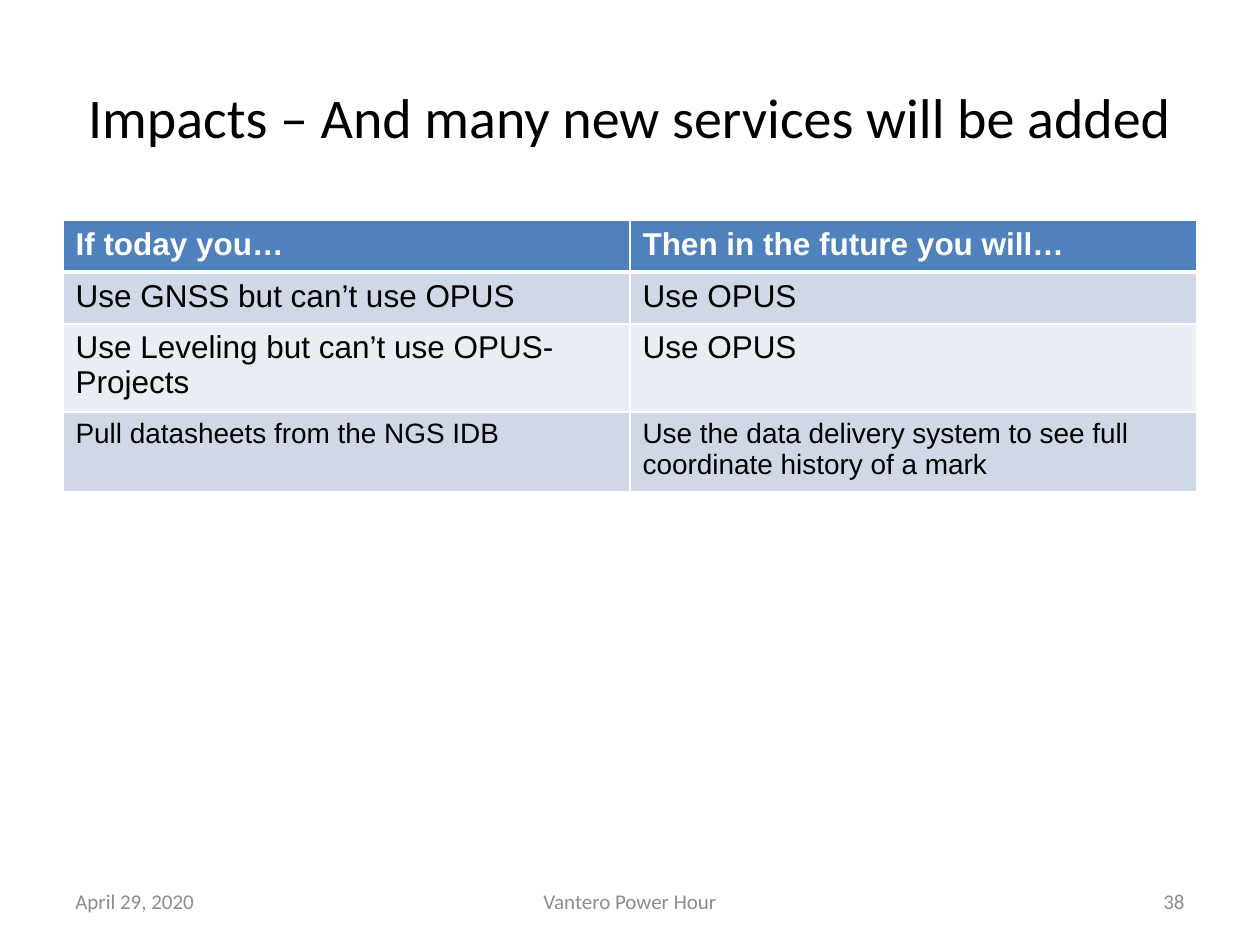
from lxml.etree import SubElement
from pptx import Presentation
from pptx.dml.color import RGBColor
from pptx.enum.text import MSO_ANCHOR as Anchor, PP_ALIGN as Align
from pptx.oxml.ns import qn
from pptx.util import Inches, Pt

WIDTH, HEIGHT = 10, 7.5
MARGIN = WIDTH / 20
CONTENT = WIDTH - 2 * MARGIN
ROW_HEIGHT = 0.41
HEADER_FILL = "4F81BD"
BAND_FILLS = ("D0D8E8", "E9EDF4")
IMPACTS = [
    ("If today you…", "Then in the future you will…"),
    ("Use GNSS but can’t use OPUS", "Use OPUS"),
    ("Use Leveling but can’t use OPUS-Projects", "Use OPUS"),
    ("Pull datasheets from the NGS IDB",
     "Use the data delivery system to see full coordinate history of a mark"),
]
ROW_SIZES = (18, 18, 18, 16)


def color(value):
    return RGBColor.from_string(value)


def write(frame, text, *, size, font="Calibri", fill="000000", bold=False, align=Align.LEFT):
    paragraph = frame.paragraphs[0]
    paragraph.alignment = align
    run = paragraph.add_run()
    run.text = text
    run.font.name = font
    run.font.size = Pt(size)
    run.font.bold = bold
    run.font.color.rgb = color(fill)


def add_text(slide, text, left, top, width, height, **style):
    box = slide.shapes.add_textbox(*map(Inches, (left, top, width, height)))
    frame = box.text_frame
    frame.word_wrap = True
    frame.vertical_anchor = Anchor.MIDDLE
    write(frame, text, **style)


def set_borders(cell, top, bottom):
    """Draw white cell borders, 1 pt at the sides; top and bottom in points."""
    properties = cell._tc.get_or_add_tcPr()
    for side, points in (("L", 1), ("R", 1), ("T", top), ("B", bottom)):
        line = SubElement(properties, qn(f"a:ln{side}"), w=str(Pt(points)))
        solid = SubElement(line, qn("a:solidFill"))
        SubElement(solid, qn("a:srgbClr"), val="FFFFFF")


def add_impact_table(slide):
    rows, columns = len(IMPACTS), len(IMPACTS[0])
    table = slide.shapes.add_table(
        rows, columns, Inches(MARGIN), Inches(1.75),
        Inches(CONTENT), Inches(rows * ROW_HEIGHT)).table
    for row, texts in enumerate(IMPACTS):
        header = row == 0
        for column, text in enumerate(texts):
            cell = table.cell(row, column)
            set_borders(cell, top=3 if row == 1 else 1, bottom=3 if header else 1)
            cell.fill.solid()
            cell.fill.fore_color.rgb = color(HEADER_FILL if header else BAND_FILLS[(row - 1) % 2])
            write(cell.text_frame, text, size=ROW_SIZES[row], font="Arial",
                  fill="FFFFFF" if header else "000000", bold=header)


def add_footer(slide):
    side, middle = 2.33, 3.17
    for text, left, width, align in (
        ("April 29, 2020", MARGIN, side, Align.LEFT),
        ("Vantero Power Hour", (WIDTH - middle) / 2, middle, Align.CENTER),
        ("38", WIDTH - MARGIN - side, side, Align.RIGHT),
    ):
        add_text(slide, text, left, 6.95, width, 0.4, size=12, fill="8C8C8C", align=align)


def main():
    presentation = Presentation()
    presentation.slide_width = Inches(WIDTH)
    presentation.slide_height = Inches(HEIGHT)
    slide = presentation.slides.add_slide(presentation.slide_layouts[6])
    add_text(slide, "Impacts – And many new services will be added",
             MARGIN, HEIGHT * 0.04, CONTENT, HEIGHT / 6, size=32, align=Align.CENTER)
    add_impact_table(slide)
    add_footer(slide)
    presentation.save("out.pptx")


if __name__ == "__main__":
    main()
